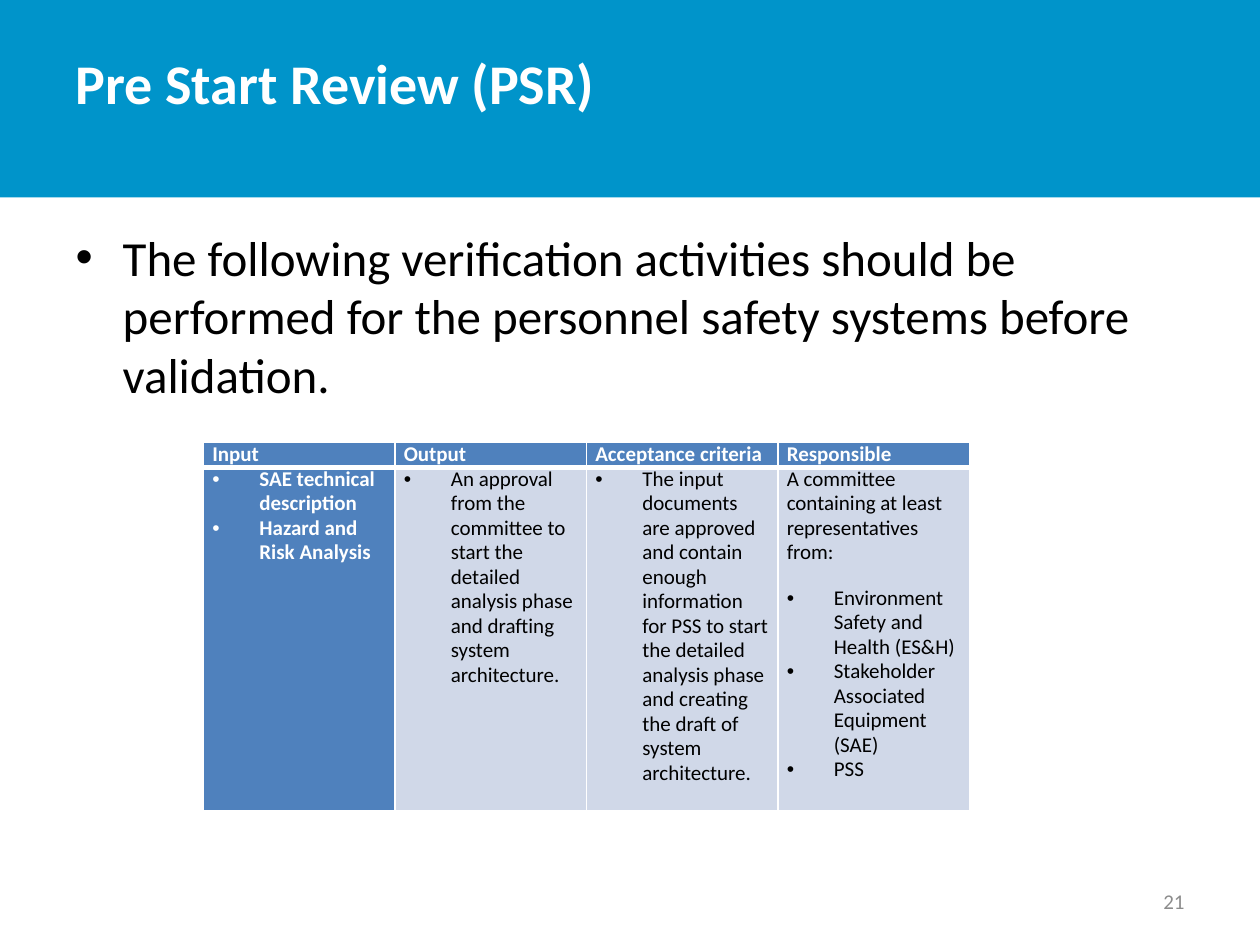
from dataclasses import dataclass

from lxml import etree
from pptx import Presentation
from pptx import util as u
from pptx.dml.color import RGBColor
from pptx.enum import shapes, text
from pptx.oxml import ns

WHITE = RGBColor(0xFF, 0xFF, 0xFF)
BLACK = RGBColor(0, 0, 0)
GREY = RGBColor(0x8C, 0x8C, 0x8C)
BAND_BLUE = RGBColor(0x00, 0x94, 0xCA)
HEAD_BLUE = RGBColor(0x4F, 0x81, 0xBD)
PALE_BLUE = RGBColor(0xD0, 0xD8, 0xE8)

TITLE_FONT = {"name": "Calibri", "size": u.Pt(32), "bold": True}
BODY_FONT = {"name": "Calibri", "size": u.Pt(28), "bold": False}
SMALL_FONT = {"name": "Calibri", "size": u.Pt(12), "bold": False}
STRONG_FONT = {**SMALL_FONT, "bold": True}
CELL_MARGINS = {"margin_left": u.Cm(0.18), "margin_right": u.Cm(0.18),
                "margin_top": 0, "margin_bottom": 0}
INDENT = u.Cm(0.95)


@dataclass
class Line:
    text: str
    bullet: bool = False
    after: int = 0


@dataclass
class Cell:
    lines: list[Line]
    strong: bool = False


HEADERS = ["Input", "Output", "Acceptance criteria", "Responsible"]
ACTIVITIES = [
    Cell([Line("SAE technical description", True),
          Line("Hazard and Risk Analysis", True)], strong=True),
    Cell([Line("An approval from the committee to start the detailed analysis "
               "phase and drafting system architecture.", True)]),
    Cell([Line("The input documents are approved and contain enough information "
               "for PSS to start the detailed analysis phase and creating the "
               "draft of system architecture.", True, 12)]),
    Cell([Line("A committee containing at least representatives from:", after=12),
          Line("Environment Safety and Health (ES&H)", True),
          Line("Stakeholder Associated Equipment (SAE)", True),
          Line("PSS", True, 12)]),
]


def set_all(obj, values: dict) -> None:
    for name, value in values.items():
        setattr(obj, name, value)


def place(sp, left: float, top: float, width: float, height: float) -> None:
    set_all(sp, {"left": u.Cm(left), "top": u.Cm(top),
                 "width": u.Cm(width), "height": u.Cm(height)})


def add_run(p, words: str, font: dict, color: RGBColor) -> None:
    r = p.add_run()
    r.text = words
    set_all(r.font, font)
    r.font.color.rgb = color


def add_bullet(p) -> None:
    pPr = p._p.get_or_add_pPr()
    pPr.set("marL", str(INDENT))
    pPr.set("indent", str(-INDENT))
    etree.SubElement(pPr, ns.qn("a:buFont")).set("typeface", "Arial")
    etree.SubElement(pPr, ns.qn("a:buChar")).set("char", "•")


def set_borders(cell, widths: dict[str, float]) -> None:
    tcPr = cell._tc.get_or_add_tcPr()
    for side, width in widths.items():
        ln = etree.SubElement(tcPr, ns.qn(f"a:ln{side}"), w=str(u.Pt(width)))
        fill = etree.SubElement(ln, ns.qn("a:solidFill"))
        etree.SubElement(fill, ns.qn("a:srgbClr"), val=str(WHITE))


def fill_cell(cell, content: Cell, borders: dict[str, float]) -> None:
    set_all(cell, CELL_MARGINS)
    set_borders(cell, borders)
    cell.fill.solid()
    cell.fill.fore_color.rgb = HEAD_BLUE if content.strong else PALE_BLUE
    tf = cell.text_frame
    for i, line in enumerate(content.lines):
        p = tf.add_paragraph() if i else tf.paragraphs[0]
        if line.bullet:
            add_bullet(p)
        set_all(p, {"line_spacing": u.Pt(14), "space_after": u.Pt(line.after)})
        add_run(p, line.text,
                STRONG_FONT if content.strong else SMALL_FONT,
                WHITE if content.strong else BLACK)


def add_activity_table(s) -> None:
    frame = s.shapes.add_table(2, len(HEADERS), u.Cm(4.1), u.Cm(8.92),
                               u.Cm(15.44), u.Cm(7.42))
    table = frame.table
    for row, height in zip(table.rows, (0.5, 6.92)):
        row.height = u.Cm(height)
    rows = [[Cell([Line(h, after=12)], strong=True) for h in HEADERS], ACTIVITIES]
    borders = [{"L": 1, "R": 1, "T": 1, "B": 3}, {"L": 1, "R": 1, "T": 3, "B": 1}]
    for r, contents in enumerate(rows):
        for c, content in enumerate(contents):
            fill_cell(table.cell(r, c), content, borders[r])


def main() -> None:
    prs = Presentation()
    prs.slide_width, prs.slide_height = u.Cm(25.4), u.Cm(19.05)
    s = prs.slides.add_slide(prs.slide_layouts[1])

    # Title band, behind the title
    band = s.shapes.add_shape(shapes.MSO_SHAPE.RECTANGLE, 0, 0,
                              prs.slide_width, u.Cm(3.98))
    band.shadow.inherit = False
    band.fill.solid()
    band.fill.fore_color.rgb = BAND_BLUE
    band.line.fill.background()
    s.shapes._spTree.insert(2, band._element)

    # Title, raised within its box by the bottom margin
    title = s.shapes.title
    place(title, 1.27, 0.76, 19.84, 3.18)
    tf = title.text_frame
    set_all(tf, {"vertical_anchor": text.MSO_ANCHOR.MIDDLE,
                 "margin_bottom": u.Cm(1.5), "word_wrap": True})
    tf.paragraphs[0].alignment = text.PP_ALIGN.LEFT
    add_run(tf.paragraphs[0], "Pre Start Review (PSR)", TITLE_FONT, WHITE)

    # Body
    body = s.placeholders[1]
    place(body, 1.27, 4.45, 22.86, 12.57)
    p = body.text_frame.paragraphs[0]
    add_bullet(p)
    p.space_before = u.Pt(0)
    add_run(p, "The following verification activities should be performed for "
               "the personnel safety systems before validation.", BODY_FONT, BLACK)

    # Page number
    number = s.shapes.add_textbox(u.Cm(18.21), u.Cm(17.65), u.Cm(5.92), u.Cm(1.02))
    tf = number.text_frame
    set_all(tf, {"vertical_anchor": text.MSO_ANCHOR.MIDDLE, "word_wrap": True})
    tf.paragraphs[0].alignment = text.PP_ALIGN.RIGHT
    add_run(tf.paragraphs[0], "21", SMALL_FONT, GREY)

    add_activity_table(s)
    prs.save("out.pptx")


if __name__ == "__main__":
    main()
